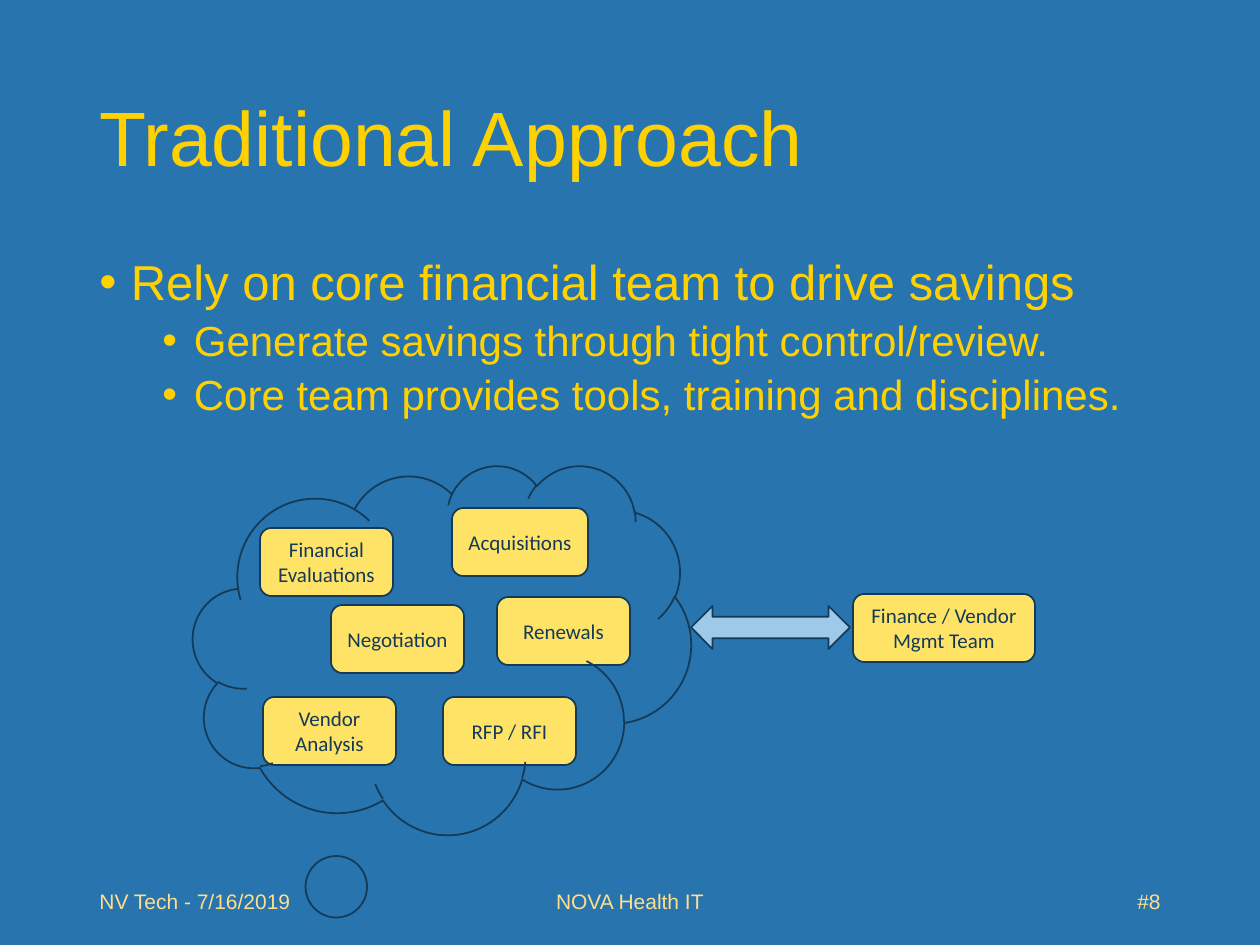
from collections import namedtuple
from dataclasses import dataclass

from lxml import etree
from pptx import Presentation
from pptx import util as u
from pptx.dml.color import RGBColor
from pptx.enum import shapes, text
from pptx.oxml.ns import qn

Box = namedtuple("Box", "left top width height")


@dataclass(frozen=True)
class Theme:
    """Colours, fonts and type sizes of the slide."""
    background: str = "2774AE"
    gold: str = "FFD100"
    footer: str = "FFDE8C"
    card: str = "FFE366"
    arrow: str = "9EC9E9"
    ink: str = "143A57"
    font: str = "Arial"
    card_font: str = "Calibri"
    title_size: int = 44
    body_sizes: tuple = (28, 24)
    small_size: int = 12


THEME = Theme()
ALIGN = text.PP_ALIGN
KIND = shapes.MSO_SHAPE


def px(value):
    """Turn slide pixels into EMU at 126 pixels to the inch."""
    return u.Emu(round(value * 914400 / 126))


def inside(box, left, top, width, height):
    """Return a box placed relative to another box."""
    return Box(box.left + left, box.top + top, width, height)


def add_run(paragraph, wording, size, color, font=THEME.font):
    """Add one styled run to a paragraph."""
    run = paragraph.add_run()
    run.text = wording
    run.font.size = u.Pt(size)
    run.font.name = font
    run.font.color.rgb = RGBColor.from_string(color)


def add_frame(slide, box, anchor=text.MSO_ANCHOR.MIDDLE):
    """Add a wrapping text box and return its text frame."""
    frame = slide.shapes.add_textbox(*map(px, box)).text_frame
    frame.word_wrap = True
    frame.vertical_anchor = anchor
    return frame


def add_outlined(slide, kind, box, fill=None):
    """Add a preset shape with the thin dark outline."""
    shape = slide.shapes.add_shape(kind, *map(px, box))
    shape.shadow.inherit = False
    if fill:
        shape.fill.solid()
        shape.fill.fore_color.rgb = RGBColor.from_string(fill)
    else:
        shape.fill.background()
    shape.line.color.rgb = RGBColor.from_string(THEME.ink)
    shape.line.width = u.Pt(1)
    return shape


def add_card(slide, box, wording):
    """Add a labelled rounded card."""
    frame = add_outlined(slide, KIND.ROUNDED_RECTANGLE, box, THEME.card).text_frame
    frame.word_wrap = True
    frame.vertical_anchor = text.MSO_ANCHOR.MIDDLE
    paragraph = frame.paragraphs[0]
    paragraph.alignment = ALIGN.CENTER
    add_run(paragraph, wording, THEME.small_size, THEME.ink, THEME.card_font)


def add_title(slide, box, wording):
    """Add the slide title."""
    paragraph = add_frame(slide, box).paragraphs[0]
    paragraph.line_spacing = 0.9
    add_run(paragraph, wording, THEME.title_size, THEME.gold)


def add_bullets(slide, box, items):
    """Add a two-level bullet list from (level, wording) pairs."""
    frame = add_frame(slide, box, text.MSO_ANCHOR.TOP)
    for index, (level, wording) in enumerate(items):
        paragraph = frame.add_paragraph() if index else frame.paragraphs[0]
        paragraph.level = level
        paragraph.line_spacing = 0.9
        paragraph.space_before = u.Pt((10, 5)[level])
        properties = paragraph._p.get_or_add_pPr()
        properties.set("marL", str(u.Inches((0.25, 0.75)[level])))
        properties.set("indent", str(u.Inches(-0.25)))
        etree.SubElement(properties, qn("a:buFont"), typeface=THEME.font)
        etree.SubElement(properties, qn("a:buChar"), char="•")
        add_run(paragraph, wording, THEME.body_sizes[level], THEME.gold)


def add_diagram(slide, box):
    """Add the cloud of activities, the arrow and the team card."""
    cards = (
        ("Acquisitions", 259, 43, 136),
        ("Renewals", 304, 132, 133),
        ("Negotiation", 138, 140, 133),
        ("Financial Evaluations", 67, 63, 133),
        ("RFP / RFI", 250, 232, 133),
        ("Vendor Analysis", 70, 232, 133),
        ("Finance / Vendor Mgmt Team", 660, 129, 182),
    )
    for wording, left, top, width in cards:
        add_card(slide, inside(box, left, top, width, 68), wording)
    cloud = add_outlined(slide, KIND.CLOUD_CALLOUT, inside(box, 0, 0, 498, 369))
    cloud.adjustments[0] = -0.34
    cloud.adjustments[1] = 1.03
    add_outlined(slide, KIND.LEFT_RIGHT_ARROW, inside(box, 498, 141, 159, 43), THEME.arrow)


def add_footer(slide, box):
    """Add the date, organisation and slide number."""
    parts = (
        ("NV Tech - 7/16/2019", 0, 284, ALIGN.LEFT),
        ("NOVA Health IT", 330, 426, ALIGN.CENTER),
        ("#8", box.width - 284, 284, ALIGN.RIGHT),
    )
    for wording, left, width, alignment in parts:
        paragraph = add_frame(slide, inside(box, left, 0, width, box.height)).paragraphs[0]
        paragraph.alignment = alignment
        add_run(paragraph, wording, THEME.small_size, THEME.footer)


def main():
    """Build and save the presentation."""
    presentation = Presentation()
    presentation.slide_width = px(1260)
    presentation.slide_height = px(945)
    slide = presentation.slides.add_slide(presentation.slide_layouts[6])
    slide.background.fill.solid()
    slide.background.fill.fore_color.rgb = RGBColor.from_string(THEME.background)
    add_title(slide, Box(87, 50, 1086, 183), "Traditional Approach")
    add_bullets(slide, Box(87, 252, 1086, 600), (
        (0, "Rely on core financial team to drive savings"),
        (1, "Generate savings through tight control/review."),
        (1, "Core team provides tools, training and disciplines."),
    ))
    add_footer(slide, Box(87, 876, 1086, 50))
    add_diagram(slide, Box(193, 465, 842, 369))
    presentation.save("out.pptx")


if __name__ == "__main__":
    main()
